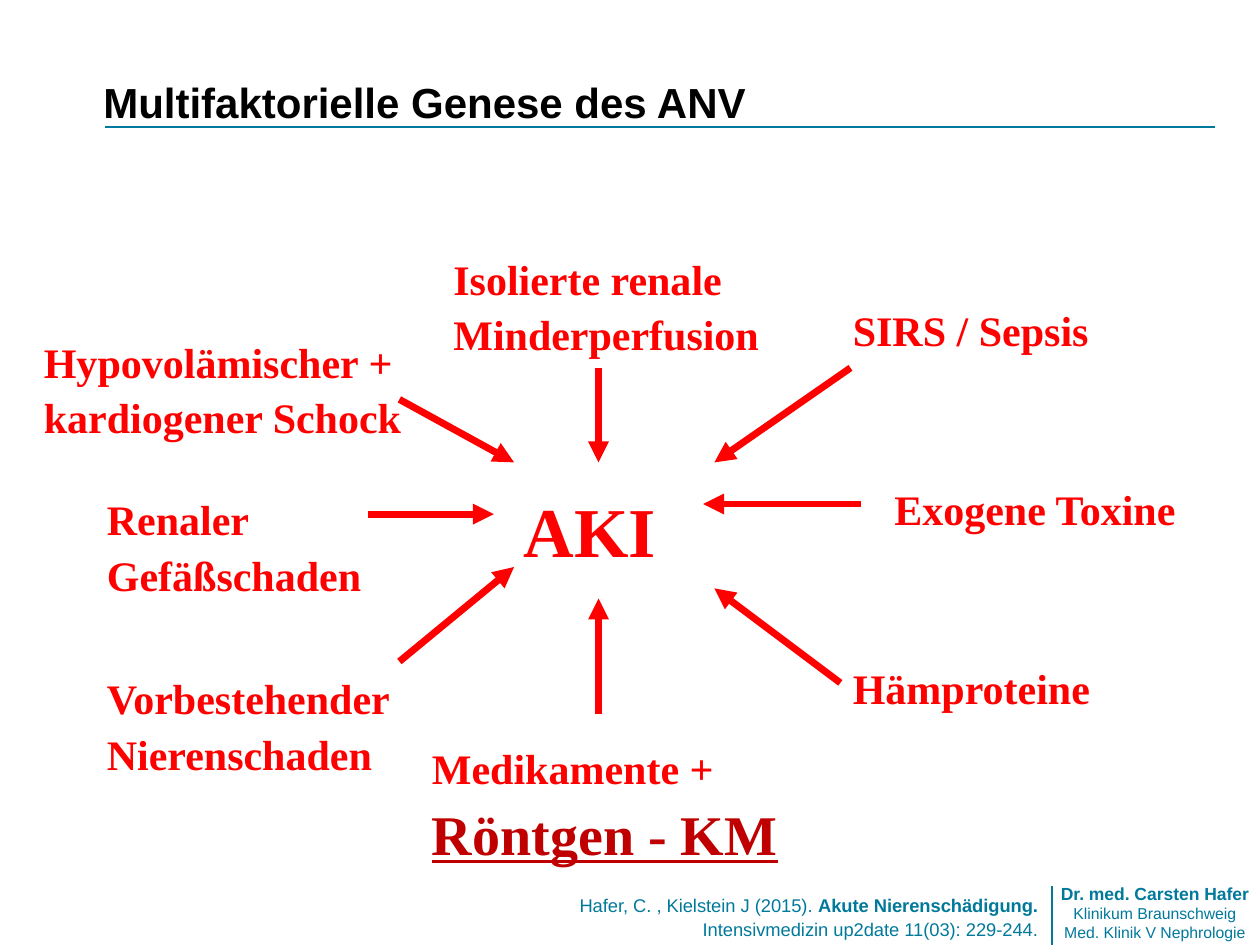
"""Build the slide on the multifactorial genesis of acute kidney failure."""
from typing import NamedTuple

from lxml import etree
from pptx import Presentation
from pptx.dml.color import RGBColor
from pptx.enum.shapes import MSO_CONNECTOR
from pptx.enum.text import MSO_ANCHOR, PP_ALIGN
from pptx.oxml.ns import qn
from pptx.util import Inches, Pt

STRAIGHT = MSO_CONNECTOR.STRAIGHT
TOP, BOTTOM = MSO_ANCHOR.TOP, MSO_ANCHOR.BOTTOM
LEFT, CENTER, RIGHT = PP_ALIGN.LEFT, PP_ALIGN.CENTER, PP_ALIGN.RIGHT

BLACK = RGBColor(0x00, 0x00, 0x00)
RED = RGBColor(0xFF, 0x00, 0x00)
DARK_RED = RGBColor(0xC0, 0x00, 0x00)
TEAL = RGBColor(0x00, 0x79, 0x9B)
SANS = "Arial"
SERIF = "Times New Roman"


class Run(NamedTuple):
    text: str
    size: float = 24
    color: RGBColor = RED
    font: str = SERIF
    bold: bool = True
    underline: bool = False


class Box(NamedTuple):
    left: float
    top: float
    width: float
    height: float
    paragraphs: list[list[Run]]
    align: PP_ALIGN = LEFT
    anchor: MSO_ANCHOR = TOP
    spacing: float = 1.1
    inset: bool = True


class Line(NamedTuple):
    x1: float
    y1: float
    x2: float
    y2: float
    color: RGBColor = RED
    width: float = 4
    arrow: bool = True


def factor(left: float, top: float, width: float, height: float, text: str) -> Box:
    """Describe one causal factor."""
    return Box(left, top, width, height, [[Run(text)]])


BOXES = [
    Box(0.82, 0.26, 8.27, 0.75, [[Run("Multifaktorielle Genese des ANV", 24, BLACK, SANS)]],
        anchor=BOTTOM, spacing=1, inset=False),
    Box(4.06, 3.75, 1.58, 0.77, [[Run("AKI", 40)]]),
    factor(0.75, 3.83, 2.25, 0.9, "Renaler Gefäßschaden"),
    factor(6.67, 5.17, 2.25, 0.5, "Hämproteine"),
    factor(6.67, 2.33, 2.25, 0.5, "SIRS / Sepsis"),
    factor(0.25, 2.58, 3.17, 0.9, "Hypovolämischer + kardiogener Schock"),
    factor(7, 3.75, 2.5, 0.5, "Exogene Toxine"),
    Box(3.33, 5.8, 3.25, 1.09,
        [[Run("Medikamente + "), Run("Röntgen - KM", 32, DARK_RED, underline=True)]]),
    factor(3.5, 1.92, 2.75, 0.9, "Isolierte renale Minderperfusion"),
    factor(0.75, 5.25, 2.67, 0.9, "Vorbestehender Nierenschaden"),
    Box(1.83, 7.03, 6.51, 0.47,
        [[Run("Hafer, C. , Kielstein J (2015). ", 10.5, TEAL, SANS, False),
          Run("Akute Nierenschädigung.", 10.5, TEAL, SANS)],
         [Run("Intensivmedizin up2date 11(03): 229-244.", 10.5, TEAL, SANS, False)]], RIGHT),
    Box(8.34, 7.01, 1.65, 0.47,
        [[Run("Dr. med. Carsten Hafer", 10, TEAL, SANS)],
         [Run("Klinikum Braunschweig", 9, TEAL, SANS, False)],
         [Run("Med. Klinik V Nephrologie", 9, TEAL, SANS, False)]],
        CENTER, spacing=1, inset=False),
]

LINES = [
    Line(9.64, 1.01, 0.83, 1.01, TEAL, 1, False),
    Line(8.35, 7.5, 8.35, 7.03, TEAL, 0.75, False),
    Line(4.75, 2.92, 4.75, 3.67),
    Line(6.75, 2.92, 5.67, 3.67),
    Line(6.67, 5.42, 5.67, 4.67),
    Line(4.75, 5.67, 4.75, 4.75),
    Line(3.17, 5.25, 4.08, 4.5),
    Line(2.92, 4.08, 3.92, 4.08),
    Line(3.17, 3.17, 4.08, 3.67),
    Line(6.83, 4, 5.58, 4),
]


def add_box(s, box: Box) -> None:
    """Add a text box with its formatted paragraphs."""
    sp = s.shapes.add_textbox(Inches(box.left), Inches(box.top),
                              Inches(box.width), Inches(box.height))
    tf = sp.text_frame
    tf.word_wrap = True
    tf.vertical_anchor = box.anchor
    if not box.inset:
        tf.margin_left = tf.margin_right = tf.margin_top = tf.margin_bottom = 0
    for i, runs in enumerate(box.paragraphs):
        p = tf.add_paragraph() if i else tf.paragraphs[0]
        p.alignment = box.align
        p.line_spacing = box.spacing
        for run in runs:
            r = p.add_run()
            r.text = run.text
            r.font.name = run.font
            r.font.size = Pt(run.size)
            r.font.bold = run.bold
            r.font.underline = run.underline
            r.font.color.rgb = run.color


def add_line(s, line: Line) -> None:
    """Add a straight line, with an arrowhead at its end if wanted."""
    cxn = s.shapes.add_connector(STRAIGHT, Inches(line.x1), Inches(line.y1),
                                 Inches(line.x2), Inches(line.y2))
    cxn.line.color.rgb = line.color
    cxn.line.width = Pt(line.width)
    if line.arrow:
        etree.SubElement(cxn.line._get_or_add_ln(), qn("a:tailEnd"), type="triangle")
    etree.SubElement(cxn._element.spPr, qn("a:effectLst"))


def main() -> None:
    """Build and save the slide."""
    prs = Presentation()
    prs.slide_width, prs.slide_height = Inches(10), Inches(7.5)
    s = prs.slides.add_slide(prs.slide_layouts[6])
    for box in BOXES:
        add_box(s, box)
    for line in LINES:
        add_line(s, line)
    prs.save("out.pptx")


if __name__ == "__main__":
    main()
